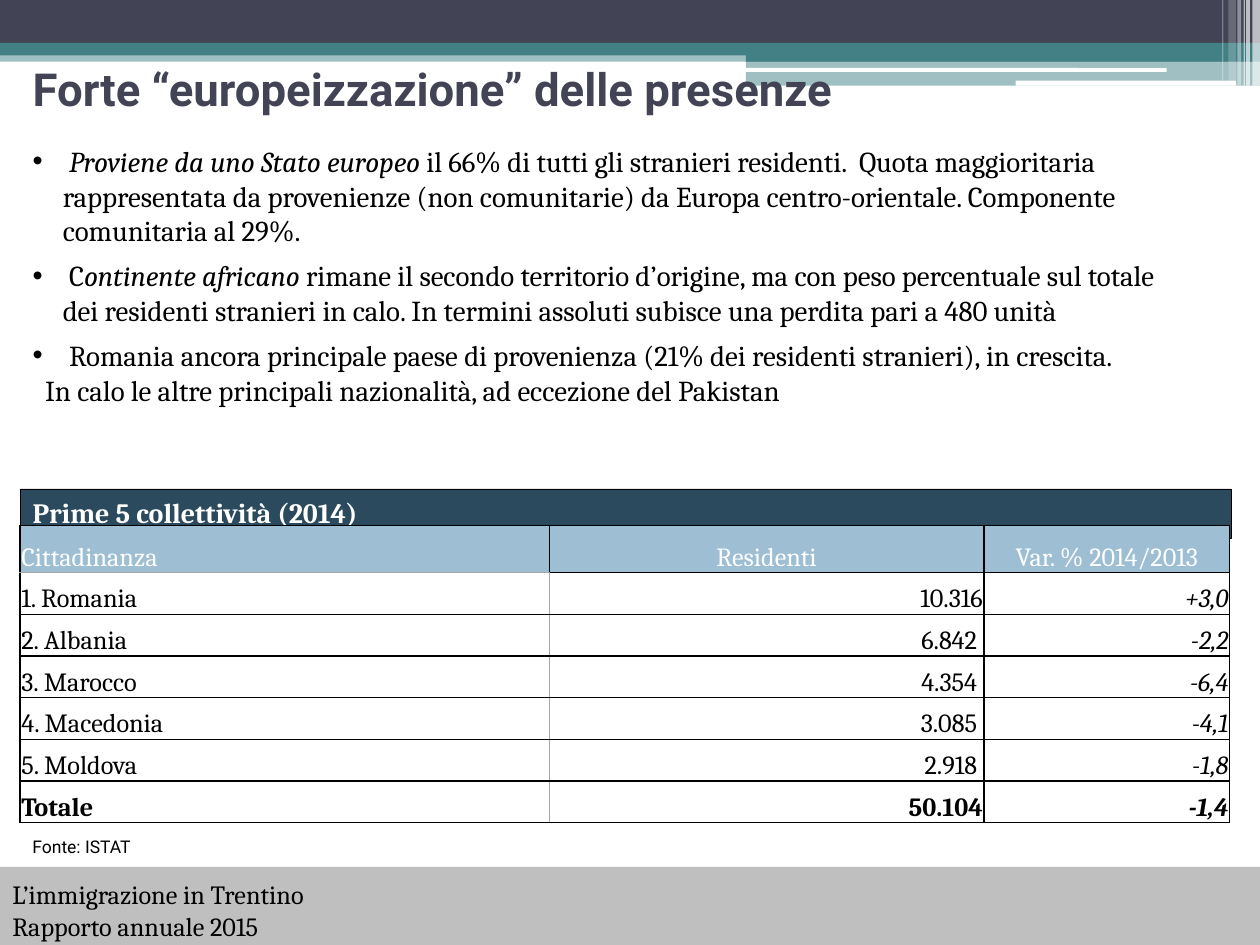
from lxml.etree import SubElement
from pptx import Presentation
from pptx.dml.color import RGBColor
from pptx.enum.shapes import MSO_SHAPE as Preset
from pptx.enum.text import MSO_ANCHOR as Anchor, PP_ALIGN as Align
from pptx.oxml.ns import qn
from pptx.util import Inches, Pt

# The slide is a grid of 100 columns and 75 rows
UNIT = Inches(0.1)
BLACK, WHITE, GREY = "000000", "FFFFFF", "A6A6A6"
NAVY, TEAL = "424456", "438086"

deck = Presentation()
deck.slide_width, deck.slide_height = 100 * UNIT, 75 * UNIT
slide = deck.slides.add_slide(deck.slide_layouts[6])
shapes = slide.shapes


def paint(fill, color, opacity=100):
    fill.solid()
    fill.fore_color.rgb = RGBColor.from_string(color)
    if opacity < 100:
        srgb = fill._xPr.find(qn("a:solidFill"))[0]
        SubElement(srgb, qn("a:alpha"), val=str(opacity * 1000))


def write(paragraph, pieces, size, color=BLACK, face="Cambria", bold=False):
    """Fill a paragraph with (text, italic) pieces."""
    for text, italic in pieces:
        run = paragraph.add_run()
        run.text = text
        run.font.name, run.font.size = face, Pt(size)
        run.font.bold, run.font.italic = bold, italic
        paint(run.font.fill, color)


# Bands, stripes, footer and table heading: column, row, columns, rows
RECT, ROUND = Preset.RECTANGLE, Preset.ROUNDED_RECTANGLE
blocks = [
    (RECT, 0, 4, 100, 0.9, TEAL, 50),
    (RECT, 0, 0, 100, 3.4, NAVY, 100),
    (RECT, 0, 3.4, 100, 1, TEAL, 100),
    (RECT, 59.2, 3.9, 40.8, 1, TEAL, 100),
    (RECT, 59.2, 4.8, 40.8, 2, TEAL, 50),
    (ROUND, 59.1, 5.4, 33.5, 0.3, WHITE, 100),
    (ROUND, 80.6, 6.4, 17.5, 0.4, WHITE, 100),
    (RECT, 99.4, 0, 0.6, 6.8, WHITE, 65),
    (RECT, 98.9, 0, 0.3, 6.8, WHITE, 65),
    (RECT, 98.7, 0, 0.1, 6.8, WHITE, 60),
    (RECT, 98.2, 0, 0.3, 6.8, WHITE, 40),
    (RECT, 97.5, 0, 0.6, 6.4, WHITE, 20),
    (RECT, 97, 0, 0.1, 6.4, WHITE, 30),
    (RECT, 0, 68.8, 100, 6.2, "BFBFBF", 100),
    (RECT, 1.6, 38.8, 96.1, 3.9, "2B4A5E", 100),
]
drawn = []
for preset, col, row, cols, rows, color, opacity in blocks:
    block = shapes.add_shape(preset, *(int(n * UNIT) for n in (col, row, cols, rows)))
    block.shadow.inherit = False
    block.line.fill.background()
    paint(block.fill, color, opacity)
    drawn.append(block)
footer, heading = drawn[-2:]

# Footer text
footer_text = footer.text_frame
footer_text.vertical_anchor = Anchor.MIDDLE
footer_text.margin_top = Inches(0.11)
for number, line in enumerate(["L’immigrazione in Trentino", "Rapporto annuale 2015"]):
    paragraph = footer_text.add_paragraph() if number else footer_text.paragraphs[0]
    paragraph.alignment = Align.LEFT
    write(paragraph, [(line, False)], 15)

# Table heading
paint(heading.line.fill, BLACK)
heading.line.width = Pt(0.25)
heading.text_frame.vertical_anchor = Anchor.TOP
caption = heading.text_frame.paragraphs[0]
caption.alignment, caption.space_before = Align.LEFT, Pt(3.2)
write(caption, [("Prime 5 collettività (2014)", False)], 16, WHITE, bold=True)

# Title, source line and bullet list
texts = [
    (1.6, 3.9, 92.2, 6.2, Anchor.MIDDLE),
    (1.6, 65.6, 50, 3.1, Anchor.MIDDLE),
    (1.6, 10.9, 93.8, 24.9, Anchor.TOP),
]
frames = []
for col, row, cols, rows, anchor in texts:
    frame = shapes.add_textbox(*(int(n * UNIT) for n in (col, row, cols, rows))).text_frame
    frame.word_wrap, frame.vertical_anchor = True, anchor
    frames.append(frame)
title, source, points = frames
write(title.paragraphs[0], [("Forte “europeizzazione” delle presenze", False)],
      26, NAVY, "Roboto", True)
write(source.paragraphs[0], [("Fonte: ISTAT", False)], 10, face="Roboto")

bullets = [
    [(" ", False), ("Proviene da uno Stato europeo ", True),
     ("il 66% di tutti gli stranieri residenti.  Quota maggioritaria rappresentata da "
      "provenienze (non comunitarie) da Europa centro-orientale. Componente "
      "comunitaria al 29%.", False)],
    [(" C", False), ("ontinente africano ", True),
     ("rimane il secondo territorio d’origine, ma con peso percentuale sul totale dei "
      "residenti stranieri in calo. In termini assoluti subisce una perdita pari a "
      "480 unità", False)],
    [(" Romania ancora principale paese di provenienza (21% dei residenti stranieri), "
      "in crescita.", False)],
]
for number, pieces in enumerate(bullets):
    paragraph = points.add_paragraph() if number else points.paragraphs[0]
    paragraph.space_before = Pt(6 if number else 0)
    props = paragraph._p.get_or_add_pPr()
    props.set("marL", str(Inches(0.24)))
    props.set("indent", str(-Inches(0.24)))
    SubElement(props, qn("a:buFont"), typeface="Arial")
    SubElement(props, qn("a:buChar"), char="•")
    write(paragraph, pieces, 16.5)
closing = points.add_paragraph()
closing._p.get_or_add_pPr().set("marL", str(Inches(0.1)))
write(closing, [("In calo le altre principali nazionalità, ad eccezione del Pakistan", False)], 16.5)

# Table of the five largest communities
records = [
    ("Cittadinanza", "Residenti", "Var. % 2014/2013"),
    ("1. Romania", "10.316", "+3,0"),
    ("2. Albania", "6.842 ", "-2,2"),
    ("3. Marocco", "4.354 ", "-6,4"),
    ("4. Macedonia", "3.085 ", "-4,1"),
    ("5. Moldova", "2.918 ", "-1,8"),
    ("Totale", "50.104", "-1,4"),
]
table = shapes.add_table(len(records), 3, *(int(n * UNIT) for n in (1.6, 41.7, 96.1, 23.7))).table
table.first_row = table.horz_banding = False
for column, cols in zip(table.columns, (42, 34.5, 19.5)):
    column.width = int(cols * UNIT)

for r, record in enumerate(records):
    header, total = r == 0, r == len(records) - 1
    table.rows[r].height = int((3.75 if header else 3.31) * UNIT)
    for c, value in enumerate(record):
        cell = table.cell(r, c)
        cell.vertical_anchor = Anchor.BOTTOM
        cell.margin_left = cell.margin_right = cell.margin_top = Inches(0.01)
        cell.margin_bottom = 0
        paragraph = cell.text_frame.paragraphs[0]
        if c:
            paragraph.alignment = Align.CENTER if header else Align.RIGHT
        write(paragraph, [(value, c == 2 and not header)], 15,
              WHITE if header else BLACK, bold=total)

        # Grey lines: right of the names, and between header and first name
        grey_sides = {(0, True): "B", (0, False): "R", (1, False): "L"}.get((c, header), "")
        if (r, c) == (1, 0):
            grey_sides += "T"
        for side in "LRTB":
            edge = SubElement(cell._tc.get_or_add_tcPr(), qn("a:ln" + side), w=str(Pt(1)))
            ink = SubElement(edge, qn("a:solidFill"))
            SubElement(ink, qn("a:srgbClr"), val=GREY if side in grey_sides else BLACK)
        if header:
            paint(cell.fill, "9DBED3")
        else:
            cell.fill.background()

deck.save("out.pptx")
